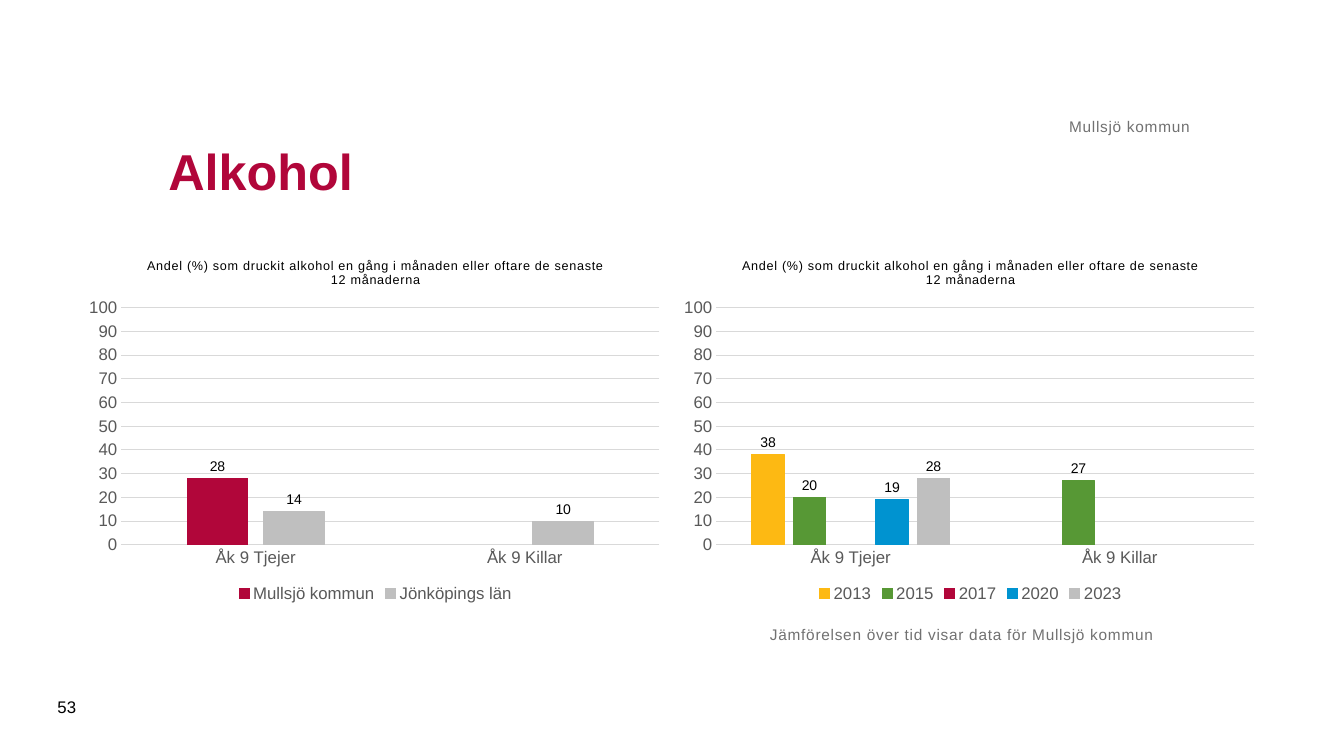
from lxml import etree
from pptx import Presentation
from pptx.chart.data import CategoryChartData as ChartData
from pptx.dml.color import RGBColor
from pptx.enum.chart import XL_CHART_TYPE as ChartType
from pptx.enum.chart import XL_LABEL_POSITION as LabelPos
from pptx.enum.chart import XL_LEGEND_POSITION as LegendPos
from pptx.enum.chart import XL_TICK_MARK as Tick
from pptx.enum.text import MSO_ANCHOR as Anchor
from pptx.enum.text import PP_ALIGN as Align
from pptx.oxml.ns import qn
from pptx.util import Pt

CRIMSON = RGBColor(0xB1, 0x06, 0x3A)
SILVER = RGBColor(0xBF, 0xBF, 0xBF)
YELLOW = RGBColor(0xFD, 0xB9, 0x13)
GREEN = RGBColor(0x57, 0x98, 0x35)
BLUE = RGBColor(0x00, 0x93, 0xD0)
BLACK = RGBColor(0x00, 0x00, 0x00)
CAPTION = RGBColor(0x71, 0x71, 0x71)
AXIS = RGBColor(0x59, 0x59, 0x59)
GRID = RGBColor(0xD9, 0xD9, 0xD9)

QUESTION = "Andel (%) som druckit alkohol en gång i månaden eller oftare de senaste 12 månaderna"
GRADES = ["Åk 9 Tjejer", "Åk 9 Killar"]
BY_REGION = [
    ("Mullsjö kommun", (28, None), CRIMSON),
    ("Jönköpings län", (14, 10), SILVER),
]
BY_YEAR = [
    ("2013", (38, None), YELLOW),
    ("2015", (20, 27), GREEN),
    ("2017", (None, None), CRIMSON),
    ("2020", (19, None), BLUE),
    ("2023", (28, None), SILVER),
]


class SlideBuilder:
    font_name = "Arial"
    number_format = "#,##0;#,##0"
    plot_box = {"x": 0.07, "y": 0.18, "w": 0.91, "h": 0.65}

    def __init__(self, slide):
        self.slide = slide

    def set_font(self, font, size, color, bold=False):
        values = {"name": self.font_name, "size": Pt(size), "bold": bold}
        for key, value in values.items():
            setattr(font, key, value)
        font.color.rgb = color

    def set_line(self, line, color):
        line.color.rgb = color
        line.width = Pt(0.75)

    def fill_text(self, tf, text, size, color, bold=False, spacing=0, align=Align.LEFT):
        p = tf.paragraphs[0]
        p.alignment = align
        r = p.add_run()
        r.text = text
        self.set_font(r.font, size, color, bold)
        if spacing:
            r.font._element.set("spc", str(spacing))

    def title(self, text, box):
        sp = self.slide.shapes.title
        sp.left, sp.top, sp.width, sp.height = map(Pt, box)
        sp.text_frame.vertical_anchor = Anchor.MIDDLE
        self.fill_text(sp.text_frame, text, 36, CRIMSON, bold=True)

    def text(self, text, box, size, color, anchor=Anchor.TOP, inset=0, **style):
        tf = self.slide.shapes.add_textbox(*map(Pt, box)).text_frame
        frame = {"word_wrap": True, "vertical_anchor": anchor}
        frame.update({f"margin_{side}": Pt(inset) for side in ("left", "top", "right", "bottom")})
        for key, value in frame.items():
            setattr(tf, key, value)
        self.fill_text(tf, text, size, color, **style)

    def chart(self, series, box):
        data = ChartData()
        data.categories = GRADES
        for name, values, _ in series:
            data.add_series(name, values)
        frame = self.slide.shapes.add_chart(ChartType.COLUMN_CLUSTERED, *map(Pt, box), data)
        chart = frame.chart
        self.set_font(chart.font, 10, BLACK)
        self.fill_text(chart.chart_title.text_frame, QUESTION, 9, BLACK, spacing=50, align=Align.CENTER)
        chart.chart_title.include_in_layout = False
        chart.has_legend = True
        chart.legend.position = LegendPos.BOTTOM
        chart.legend.include_in_layout = False
        self.set_font(chart.legend.font, 12, AXIS)
        self.axes(chart)
        self.columns(chart.plots[0], series)
        self.place_plot(chart)

    def axes(self, chart):
        cat, val = chart.category_axis, chart.value_axis
        for axis in (cat, val):
            axis.major_tick_mark = axis.minor_tick_mark = Tick.NONE
            self.set_font(axis.tick_labels.font, 12, AXIS)
        self.set_line(cat.format.line, GRID)
        val.format.line.fill.background()
        scale = {"minimum_scale": 0, "maximum_scale": 100, "major_unit": 10, "has_major_gridlines": True}
        for key, value in scale.items():
            setattr(val, key, value)
        self.set_line(val.major_gridlines.format.line, GRID)
        val.tick_labels.number_format = self.number_format
        val.tick_labels.number_format_is_linked = False

    def columns(self, plot, series):
        for key, value in {"gap_width": 219, "overlap": -27, "vary_by_categories": False}.items():
            setattr(plot, key, value)
        for column, (_, _, color) in zip(plot.series, series):
            column.format.fill.solid()
            column.format.fill.fore_color.rgb = color
            self.set_line(column.format.line, color)
            labels = column.data_labels
            label_format = {
                "show_value": True,
                "position": LabelPos.OUTSIDE_END,
                "number_format": self.number_format,
                "number_format_is_linked": False,
            }
            for key, value in label_format.items():
                setattr(labels, key, value)
            self.set_font(labels.font, 10, BLACK)

    def place_plot(self, chart):
        area = chart._chartSpace.find(".//" + qn("c:plotArea"))
        for old in area.findall(qn("c:layout")):
            area.remove(old)
        layout = etree.Element(qn("c:layout"))
        area.insert(0, layout)
        manual = etree.SubElement(layout, qn("c:manualLayout"))
        settings = {"layoutTarget": "inner", "xMode": "edge", "yMode": "edge", **self.plot_box}
        for tag, value in settings.items():
            etree.SubElement(manual, qn("c:" + tag)).set("val", str(value))


def main():
    prs = Presentation()
    prs.slide_width, prs.slide_height = Pt(960), Pt(540)
    s = SlideBuilder(prs.slides.add_slide(prs.slide_layouts[5]))
    for left, series in ((57, BY_REGION), (482, BY_YEAR)):
        s.chart(series, (left, 173, 422.5, 260.5))
    s.title("Alkohol", (113, 70.5, 737, 102))
    s.text("Jämförelsen över tid visar data för Mullsjö kommun",
           (550, 446.5, 382, 67.5), 11, CAPTION, spacing=50)
    s.text("Mullsjö kommun", (113, 44.5, 737, 52.5), 11, CAPTION,
           anchor=Anchor.BOTTOM, spacing=50, align=Align.RIGHT)
    s.text("53", (34, 490.5, 41, 29), 12, BLACK, anchor=Anchor.MIDDLE, inset=7.2)
    prs.save("out.pptx")


if __name__ == "__main__":
    main()
